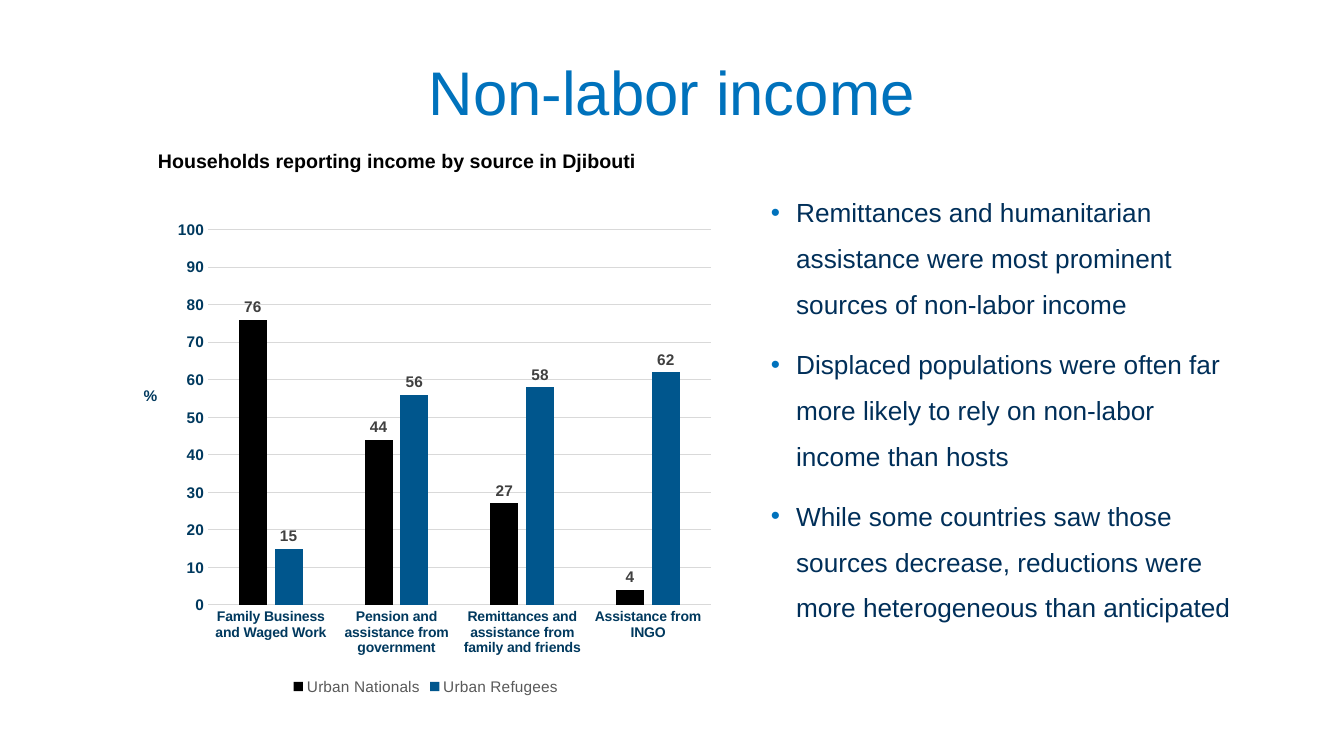
from lxml import etree
from pptx import Presentation
from pptx.chart.data import CategoryChartData
from pptx.dml.color import RGBColor
from pptx.enum.chart import XL_CHART_TYPE as ChartType
from pptx.enum.chart import XL_LABEL_POSITION as LabelPosition
from pptx.enum.chart import XL_LEGEND_POSITION as LegendPosition
from pptx.enum.chart import XL_TICK_MARK as TickMark
from pptx.enum.text import MSO_ANCHOR as Anchor
from pptx.enum.text import PP_ALIGN as Align
from pptx.oxml.ns import qn
from pptx.util import Pt

FONT = "Arial"
BLACK = RGBColor(0x00, 0x00, 0x00)
TITLE_BLUE = RGBColor(0x00, 0x72, 0xBC)
BODY_NAVY = RGBColor(0x00, 0x2F, 0x59)
AXIS_NAVY = RGBColor(0x00, 0x39, 0x5E)
REFUGEE_BLUE = RGBColor(0x00, 0x56, 0x8D)
LABEL_GRAY = RGBColor(0x40, 0x40, 0x40)
LEGEND_GRAY = RGBColor(0x59, 0x59, 0x59)
GRID_GRAY = RGBColor(0xD9, 0xD9, 0xD9)

FINDINGS = [
    "Remittances and humanitarian assistance were most prominent sources of non-labor income",
    "Displaced populations were often far more likely to rely on non-labor income than hosts",
    "While some countries saw those sources decrease, reductions were more heterogeneous than anticipated",
]
SOURCES = [
    "Family Business and Waged Work",
    "Pension and assistance from government",
    "Remittances and assistance from family and friends",
    "Assistance from INGO",
]
HOUSEHOLDS = [
    ("Urban Nationals", (76, 44, 27, 4), BLACK),
    ("Urban Refugees", (15, 56, 58, 62), REFUGEE_BLUE),
]


def style_font(font, size, color, bold=False):
    font.name = FONT
    font.size = Pt(size)
    font.bold = bold
    font.color.rgb = color


def add_text_frame(slide, left, top, width, height):
    box = slide.shapes.add_textbox(Pt(left), Pt(top), Pt(width), Pt(height))
    box.text_frame.word_wrap = True
    return box.text_frame


def add_heading(slide, text, bounds, size, color, bold=False, anchor=Anchor.TOP):
    frame = add_text_frame(slide, *bounds)
    frame.vertical_anchor = anchor
    frame.text = text
    para = frame.paragraphs[0]
    para.alignment = Align.CENTER
    style_font(para.runs[0].font, size, color, bold)


def add_bullet(para, color):
    properties = para._p.get_or_add_pPr()
    properties.set("marL", str(Pt(18)))
    properties.set("indent", str(-Pt(18)))
    bullet_color = etree.SubElement(properties, qn("a:buClr"))
    etree.SubElement(bullet_color, qn("a:srgbClr"), val=str(color))
    etree.SubElement(properties, qn("a:buFont"), typeface=FONT)
    etree.SubElement(properties, qn("a:buChar"), char="•")


def add_findings(slide, bounds):
    frame = add_text_frame(slide, *bounds)
    for index, finding in enumerate(FINDINGS):
        para = frame.add_paragraph() if index else frame.paragraphs[0]
        para.text = finding
        add_bullet(para, TITLE_BLUE)
        para.line_spacing = 1.46
        if index:
            para.space_before = Pt(10)
        style_font(para.runs[0].font, 18.7, BODY_NAVY)


def place_in_chart(element, position, inner=False, **fractions):
    """Fix a chart part at fractions (x, y, w, h) of the chart's size."""
    for previous in element.findall(qn("c:layout")):
        element.remove(previous)
    layout = etree.Element(qn("c:layout"))
    manual = etree.SubElement(layout, qn("c:manualLayout"))
    if inner:
        etree.SubElement(manual, qn("c:layoutTarget"), val="inner")
    for side in ("x", "y"):
        etree.SubElement(manual, qn(f"c:{side}Mode"), val="edge")
    for side, fraction in fractions.items():
        etree.SubElement(manual, qn(f"c:{side}"), val=str(fraction))
    element.insert(position, layout)


def style_category_axis(axis):
    axis.major_tick_mark = TickMark.NONE
    axis.format.line.color.rgb = GRID_GRAY
    axis.format.line.width = Pt(0.75)
    style_font(axis.tick_labels.font, 10, AXIS_NAVY, bold=True)


def style_value_axis(axis):
    axis.minimum_scale, axis.maximum_scale, axis.major_unit = 0, 100, 10
    axis.major_tick_mark = TickMark.NONE
    axis.format.line.fill.background()
    axis.major_gridlines.format.line.color.rgb = GRID_GRAY
    axis.major_gridlines.format.line.width = Pt(0.75)
    style_font(axis.tick_labels.font, 11, AXIS_NAVY, bold=True)
    title = axis.axis_title
    title.text_frame.text = "%"
    style_font(title.text_frame.paragraphs[0].runs[0].font, 11, AXIS_NAVY, bold=True)
    body = title.text_frame._txBody.find(qn("a:bodyPr"))
    body.set("rot", "0")
    body.set("vert", "horz")
    place_in_chart(title._element, 1, x=0.02, y=0.35)


def style_series(series, color):
    series.format.fill.solid()
    series.format.fill.fore_color.rgb = color
    labels = series.data_labels
    labels.show_value = True
    labels.position = LabelPosition.OUTSIDE_END
    style_font(labels.font, 11, LABEL_GRAY, bold=True)


def add_income_chart(slide, bounds):
    data = CategoryChartData()
    data.categories = SOURCES
    for name, shares, _ in HOUSEHOLDS:
        data.add_series(name, shares)
    frame = slide.shapes.add_chart(ChartType.COLUMN_CLUSTERED, *map(Pt, bounds), data)
    chart = frame.chart
    style_font(chart.font, 10, BLACK)
    chart.has_title = False
    chart.has_legend = True
    chart.legend.position = LegendPosition.BOTTOM
    chart.legend.include_in_layout = False
    style_font(chart.legend.font, 11, LEGEND_GRAY)

    plot = chart.plots[0]
    plot.vary_by_categories = False
    plot.gap_width = 219
    plot.overlap = -27
    for series, (_, _, color) in zip(plot.series, HOUSEHOLDS):
        style_series(series, color)
    style_category_axis(chart.category_axis)
    style_value_axis(chart.value_axis)
    plot_area = chart._chartSpace.chart.plotArea
    place_in_chart(plot_area, 0, inner=True, x=0.133, y=0.037, w=0.847, h=0.769)


def main():
    deck = Presentation()
    deck.slide_width = Pt(960)
    deck.slide_height = Pt(540)
    slide = deck.slides.add_slide(deck.slide_layouts[6])
    add_heading(slide, "Non-labor income", (66, 29, 828, 72.5), 44, TITLE_BLUE,
                anchor=Anchor.MIDDLE)
    add_findings(slide, (543.6, 126.7, 350.6, 348.5))
    add_income_chart(slide, (92.2, 151.2, 424, 348.5))
    add_heading(slide, "Households reporting income by source in Djibouti",
                (87.8, 103, 391.7, 46), 14, BLACK, bold=True)
    deck.save("out.pptx")


if __name__ == "__main__":
    main()
